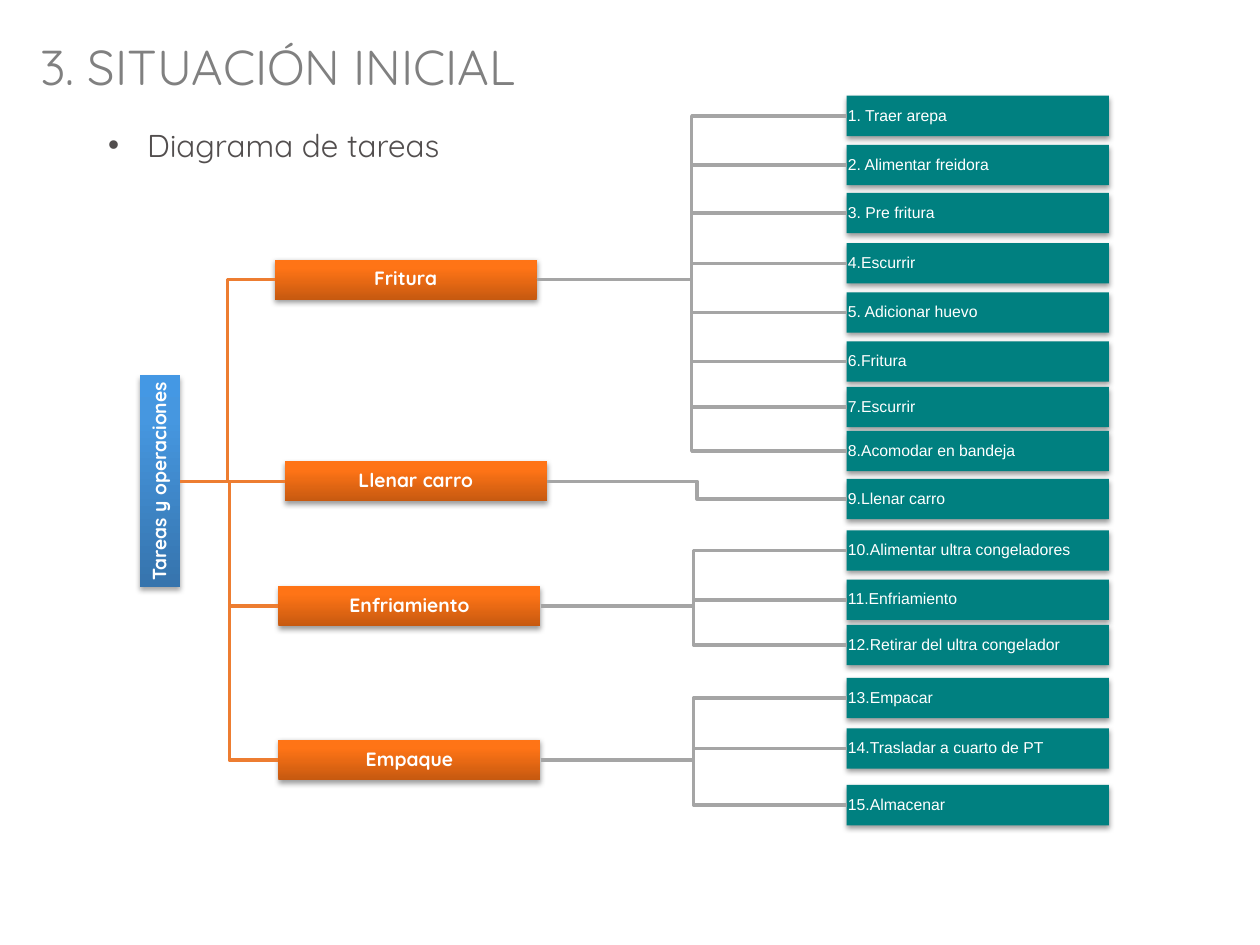
from dataclasses import dataclass
from typing import Any, Optional

import pptx
import pptx.dml.color
import pptx.enum.shapes
import pptx.enum.text
import pptx.oxml.ns
import pptx.util
from lxml import etree

RGBColor = pptx.dml.color.RGBColor
Pt = pptx.util.Pt
PP_ALIGN = pptx.enum.text.PP_ALIGN
MIDDLE = pptx.enum.text.MSO_ANCHOR.MIDDLE
qn = pptx.oxml.ns.qn

WHITE = RGBColor(0xFF, 0xFF, 0xFF)
BLACK = RGBColor(0x00, 0x00, 0x00)
TITLE_GRAY = RGBColor(0x80, 0x80, 0x80)
TEXT_GRAY = RGBColor(0x52, 0x4E, 0x4E)
LINE_GRAY = RGBColor(0xA5, 0xA5, 0xA5)
LINE_ORANGE = RGBColor(0xED, 0x7D, 0x31)
TEAL = RGBColor(0x00, 0x80, 0x80)
BLUES = (RGBColor(0x36, 0x74, 0xAD), RGBColor(0x46, 0x97, 0xE0), RGBColor(0x44, 0x98, 0xE4))
ORANGES = (RGBColor(0xC6, 0x59, 0x10), RGBColor(0xFF, 0x74, 0x16), RGBColor(0xFF, 0x75, 0x17))
GRADIENT_STOPS = (0, 80, 100)

COLUMNS = 100
BOX_COLS, BOX_ROWS = 20.8, 3.2
ROOT_COLS, ROOT_ROWS = 3.2, 16.8
TASK_COL = 67.2


@dataclass(frozen=True)
class Style:
    fill: tuple
    font: dict
    align: Any
    shadow_alpha: int = 38
    shadow_dist: float = 1.6


@dataclass(frozen=True)
class Node:
    text: str
    row: float
    col: float = TASK_COL
    children: tuple = ()


HEADING_FONT = {"name": "Quicksand", "size": Pt(11), "bold": True}
ROOT = Style(BLUES, HEADING_FONT, PP_ALIGN.CENTER, 35, 1.8)
STAGE = Style(ORANGES, HEADING_FONT, PP_ALIGN.CENTER)
TASK = Style((TEAL,), {"name": "Arial", "size": Pt(9)}, PP_ALIGN.LEFT)

TREE = Node("Tareas y operaciones", 38.2, 11.1, (
    Node("Fritura", 22.2, 21.8, (
        Node("1. Traer arepa", 9.2),
        Node("2. Alimentar freidora", 13.1),
        Node("3. Pre fritura", 16.9),
        Node("4.Escurrir", 20.9),
        Node("5. Adicionar huevo", 24.8),
        Node("6.Fritura", 28.7),
        Node("7.Escurrir", 32.3),
        Node("8.Acomodar en bandeja", 35.8))),
    Node("Llenar carro", 38.2, 22.6, (
        Node("9.Llenar carro", 39.6),)),
    Node("Enfriamiento", 48.1, 22.1, (
        Node("10.Alimentar ultra congeladores", 43.7),
        Node("11.Enfriamiento", 47.6),
        Node("12.Retirar del ultra congelador", 51.2))),
    Node("Empaque", 60.3, 22.1, (
        Node("13.Empacar", 55.4),
        Node("14.Trasladar a cuarto de PT", 59.4),
        Node("15.Almacenar", 63.9)))))

prs = pptx.Presentation()
prs.slide_width = pptx.util.Inches(10)
prs.slide_height = pptx.util.Inches(7.5)
s = prs.slides.add_slide(prs.slide_layouts[5])


def grid(cells: float) -> int:
    return round(prs.slide_width * cells / COLUMNS)


def apply(target: Any, values: dict) -> None:
    for name, value in values.items():
        setattr(target, name, value)


def add_text(tf: Any, text: str, font: dict, color: RGBColor) -> Any:
    p = tf.paragraphs[0]
    r = p.add_run()
    r.text = text
    apply(r.font, font)
    r.font.color.rgb = color
    return p


def set_insets(tf: Any, x: float, y: float) -> None:
    apply(tf, {"margin_left": grid(x), "margin_right": grid(x),
               "margin_top": grid(y), "margin_bottom": grid(y),
               "vertical_anchor": MIDDLE, "word_wrap": True})


def add_color(parent: Any, color: RGBColor) -> Any:
    return etree.SubElement(parent, qn("a:srgbClr"), val=str(color))


def set_fill(sp: Any, colors: tuple) -> None:
    if len(colors) == 1:
        sp.fill.solid()
        sp.fill.fore_color.rgb = colors[0]
        return
    sp.fill.gradient()
    sp.fill.gradient_angle = 90
    stops = sp._element.spPr.find(".//" + qn("a:gsLst"))
    for stop in list(stops):
        stops.remove(stop)
    for pos, color in zip(GRADIENT_STOPS, colors):
        add_color(etree.SubElement(stops, qn("a:gs"), pos=str(pos * 1000)), color)


def set_shadow(sp: Any, style: Style) -> None:
    sp.shadow.inherit = False
    effects = sp._element.spPr.find(qn("a:effectLst"))
    shadow = etree.SubElement(effects, qn("a:outerShdw"), blurRad=str(Pt(3.1)),
                              dist=str(Pt(style.shadow_dist)), dir="5400000", rotWithShape="0")
    etree.SubElement(add_color(shadow, BLACK), qn("a:alpha"), val=str(style.shadow_alpha * 1000))


def add_box(node: Node, style: Style, cols: float = BOX_COLS, rows: float = BOX_ROWS) -> Any:
    sp = s.shapes.add_shape(pptx.enum.shapes.MSO_SHAPE.RECTANGLE, grid(node.col),
                            grid(node.row - rows / 2), grid(cols), grid(rows))
    set_fill(sp, style.fill)
    sp.line.fill.background()
    set_shadow(sp, style)
    set_insets(sp.text_frame, 0.1, 0.1)
    p = add_text(sp.text_frame, node.text, style.font, WHITE)
    apply(p, {"alignment": style.align, "line_spacing": 0.9})
    return sp


def add_link(parent: Any, child: Any, color: RGBColor) -> None:
    x1, y1 = parent.left + parent.width, parent.top + parent.height // 2
    x2, y2 = child.left, child.top + child.height // 2
    if abs(y1 - y2) < Pt(1):
        link = s.shapes.add_connector(pptx.enum.shapes.MSO_CONNECTOR.STRAIGHT, x1, y1, x2, y2)
        link.begin_connect(parent, 3)
        link.end_connect(child, 1)
        etree.SubElement(link._element.spPr, qn("a:effectLst"))
    else:
        mid = (x1 + x2) // 2
        fb = s.shapes.build_freeform(x1, y1)
        fb.add_line_segments([(mid, y1), (mid, y2), (x2, y2)], close=False)
        link = fb.convert_to_shape()
        link.fill.background()
        link.shadow.inherit = False
    link.line.color.rgb = color
    link.line.width = Pt(2)


def add_title(text: str) -> None:
    sp = s.shapes.title
    apply(sp, {"left": grid(3), "top": grid(2.7), "width": grid(87), "height": grid(5)})
    set_insets(sp.text_frame, 0.2, 0.1)
    p = add_text(sp.text_frame, text, {"name": "Quicksand", "size": Pt(28)}, TITLE_GRAY)
    p.alignment = PP_ALIGN.LEFT


def add_bullet(text: str) -> None:
    tf = s.shapes.add_textbox(grid(7.6), grid(9.5), grid(30), grid(4)).text_frame
    tf.word_wrap = False
    p = add_text(tf, text, {"name": "Quicksand", "size": Pt(18)}, TEXT_GRAY)
    pPr = p._p.get_or_add_pPr()
    pPr.set("marL", str(grid(3.1)))
    pPr.set("indent", str(-grid(3.1)))
    etree.SubElement(pPr, qn("a:buFont"), typeface="Arial")
    etree.SubElement(pPr, qn("a:buChar"), char="•")


def add_tree(tree: Node) -> None:
    root = add_box(tree, ROOT, ROOT_COLS, ROOT_ROWS)
    root.text_frame._txBody.bodyPr.set("vert", "vert270")
    for stage in tree.children:
        stage_box = add_box(stage, STAGE)
        add_link(root, stage_box, LINE_ORANGE)
        for task in stage.children:
            add_link(stage_box, add_box(task, TASK), LINE_GRAY)


add_title("3. SITUACIÓN INICIAL")
add_tree(TREE)
add_bullet("Diagrama de tareas")
prs.save("out.pptx")
